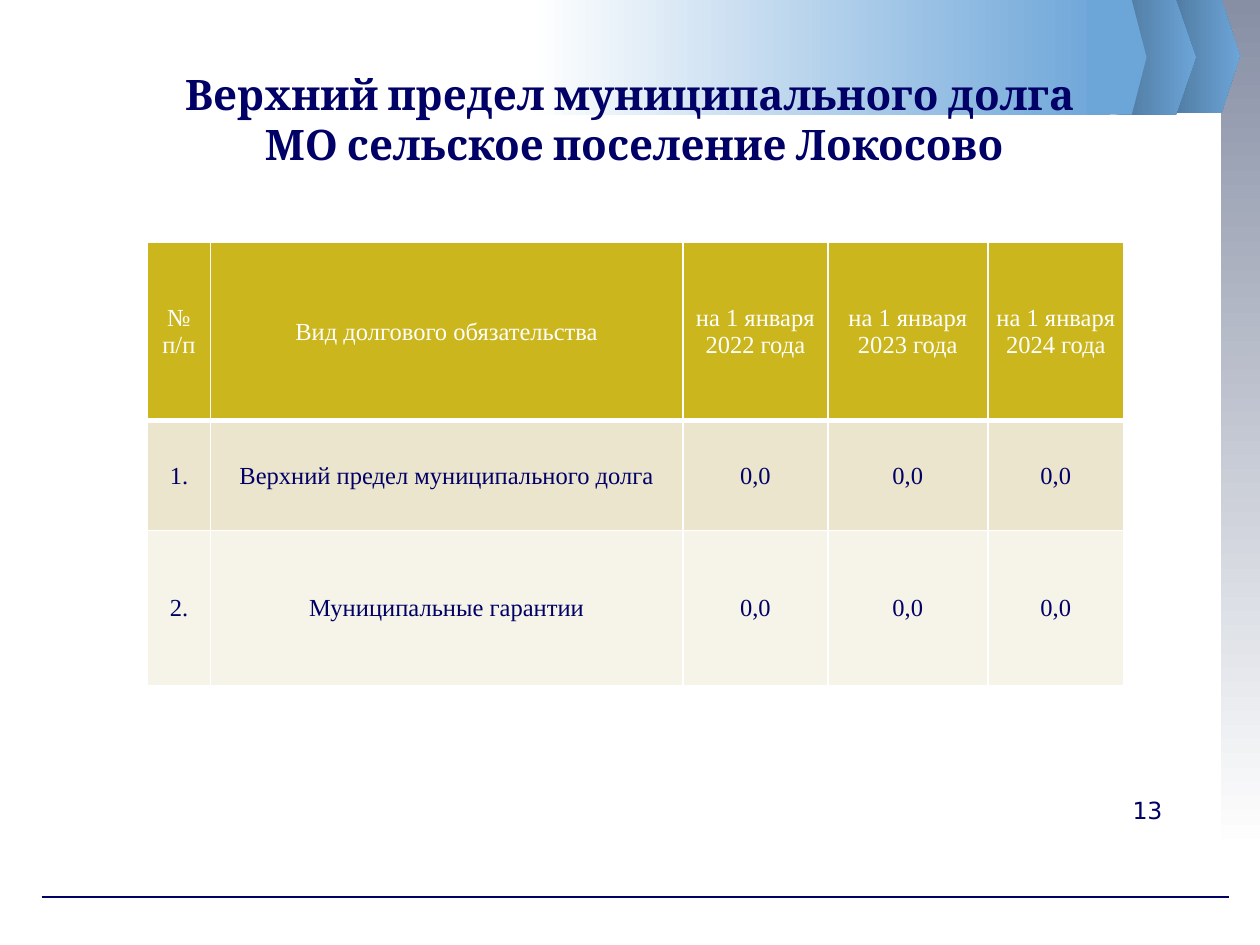
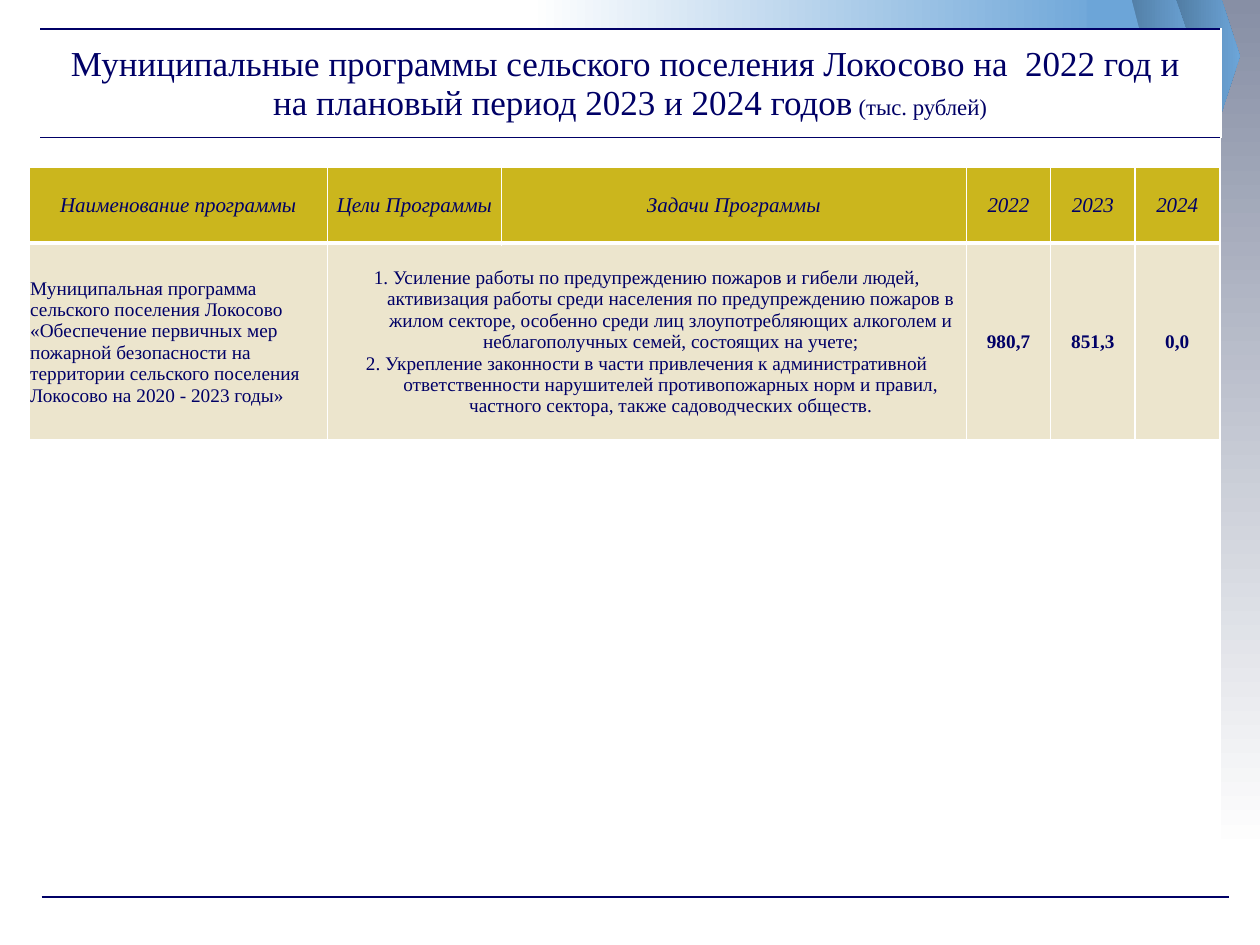
from dataclasses import dataclass, field
from typing import Optional

from lxml import etree
from pptx import Presentation
from pptx import util as u
from pptx.dml.color import RGBColor
from pptx.enum import shapes, text
from pptx.oxml.ns import qn

# Grid: 100 columns by 75 rows over the whole slide
SLIDE_W, SLIDE_H = u.Inches(10), u.Inches(7.5)
COLUMN, ROW = SLIDE_W / 100, SLIDE_H / 75

# Colours and fonts
NAVY, WHITE, SKY, STEEL, SLATE = "000066", "FFFFFF", "6CA5D8", "4D769B", "878FA5"
GOLD, SAND, CREAM = "CBB61D", "ECE5CD", "F6F3E8"
SERIF = "Times New Roman"
CENTER, LEFT = text.PP_ALIGN.CENTER, text.PP_ALIGN.LEFT
MIDDLE, TOP = text.MSO_ANCHOR.MIDDLE, text.MSO_ANCHOR.TOP

# Text formats
TITLE = {"name": "Cambria", "size": u.Pt(24), "bold": True, "color": NAVY}
NUMBER = {"name": "DejaVu Sans", "size": u.Pt(13.5), "color": NAVY}
DEBT_BODY = {"name": SERIF, "size": u.Pt(14), "color": NAVY}
DEBT_HEAD = DEBT_BODY | {"color": WHITE}
PROGRAM_HEAD = {"name": SERIF, "size": u.Pt(12), "italic": True, "color": NAVY}
PROGRAM_BODY = {"name": SERIF, "size": u.Pt(11), "color": NAVY}
PROGRAM_SUM = PROGRAM_BODY | {"bold": True}
HEADING = {"name": SERIF, "size": u.Pt(20), "color": NAVY}
HEADING_UNIT = HEADING | {"size": u.Pt(13)}

# Borders: side -> (colour, points)
THIN = {side: (WHITE, 1) for side in "LRTB"}
HEAD_EDGES = THIN | {"B": (WHITE, 3)}
BELOW_HEAD = THIN | {"T": (WHITE, 3)}
RULED = THIN | {"T": (NAVY, 1), "B": (NAVY, 1)}


@dataclass
class Box:
    col: float
    row: float
    cols: float
    rows: float

    def emu(self) -> tuple:
        return (u.Emu(round(self.col * COLUMN)), u.Emu(round(self.row * ROW)),
                u.Emu(round(self.cols * COLUMN)), u.Emu(round(self.rows * ROW)))


@dataclass
class Band:
    box: Box
    shape: shapes.MSO_SHAPE
    start: str
    end: str
    angle: int = 0


@dataclass
class Cell:
    paragraphs: list            # each paragraph is a list of (words, format)
    align: text.PP_ALIGN = CENTER
    hanging: float = 0
    span: int = 1


@dataclass
class Line:
    rows: float
    fill: str
    cells: list
    edges: dict = field(default_factory=lambda: THIN)
    inset: float = 0.01


RECT, PENTAGON = shapes.MSO_SHAPE.RECTANGLE, shapes.MSO_SHAPE.PENTAGON
BANDS = [
    Band(Box(96.9, 0, 3.1, 67.7), RECT, SLATE, WHITE, 270),
    Band(Box(92.5, -0.1, 5.9, 9.1), PENTAGON, STEEL, SKY),
    Band(Box(88.6, 0, 6.3, 9.1), PENTAGON, STEEL, SKY),
    Band(Box(42.1, 0, 46, 9.1), RECT, WHITE, SKY),
    Band(Box(86.3, 0, 4.7, 9.1), PENTAGON, SKY, SKY),
]


def rgb(value: str) -> RGBColor:
    return RGBColor.from_string(value)


def write(paragraph, runs: list, align=None) -> None:
    """Add formatted runs; a newline inside the words is a line break."""
    paragraph.alignment = align
    for words, style in runs:
        for index, part in enumerate(words.split("\n")):
            if index:
                paragraph.add_line_break()
            run = paragraph.add_run()
            run.text = part
            for name, value in style.items():
                if name == "color":
                    run.font.color.rgb = rgb(value)
                else:
                    setattr(run.font, name, value)


def draw_band(slide, band: Band) -> None:
    shape = slide.shapes.add_shape(band.shape, *band.box.emu())
    shape.shadow.inherit = False
    shape.line.fill.background()
    if band.shape == PENTAGON:
        shape.adjustments[0] = 0.25
    if band.start == band.end:
        shape.fill.solid()
        shape.fill.fore_color.rgb = rgb(band.start)
        return
    shape.fill.gradient()
    shape.fill.gradient_angle = band.angle
    for stop, color in zip(shape.fill.gradient_stops, (band.start, band.end)):
        stop.color.rgb = rgb(color)


def add_page(deck):
    """Blank slide with the shared bands and footer rule."""
    slide = deck.slides.add_slide(deck.slide_layouts[6])
    for band in BANDS:
        draw_band(slide, band)
    left, top, width, _ = Box(3.3, 71.2, 94.2, 0).emu()
    rule = slide.shapes.add_connector(shapes.MSO_CONNECTOR.STRAIGHT,
                                      left, top, left + width, top)
    rule.line.color.rgb = rgb(NAVY)
    rule.line.width = u.Pt(0.75)
    etree.SubElement(rule._element.spPr, qn("a:effectLst"))
    return slide


def add_text(slide, box: Box, words: str, style: dict, align, anchor) -> None:
    frame = slide.shapes.add_textbox(*box.emu()).text_frame
    frame.word_wrap = True
    frame.vertical_anchor = anchor
    write(frame.paragraphs[0], [(words, style)], align)


def set_edges(cell, edges: dict) -> None:
    props = cell._tc.get_or_add_tcPr()
    for side, (color, points) in edges.items():
        edge = etree.SubElement(props, qn(f"a:ln{side}"), w=str(u.Pt(points)))
        solid = etree.SubElement(edge, qn("a:solidFill"))
        etree.SubElement(solid, qn("a:srgbClr"), val=color)


def fill_cell(target, cell: Optional[Cell], line: Line) -> None:
    set_edges(target, line.edges)
    target.fill.solid()
    target.fill.fore_color.rgb = rgb(line.fill)
    inset = u.Inches(line.inset)
    layout = {"vertical_anchor": MIDDLE, "margin_left": inset,
              "margin_right": inset, "margin_top": inset, "margin_bottom": 0}
    for name, value in layout.items():
        setattr(target, name, value)
    if cell is None:
        return
    frame = target.text_frame
    for index, runs in enumerate(cell.paragraphs):
        paragraph = frame.add_paragraph() if index else frame.paragraphs[0]
        write(paragraph, runs, cell.align)
        if cell.hanging:
            indent = u.Inches(cell.hanging)
            props = paragraph._p.get_or_add_pPr()
            props.set("marL", str(indent))
            props.set("indent", str(-indent))


def add_grid(slide, col: float, row: float, widths: list, lines: list) -> None:
    box = Box(col, row, sum(widths), sum(line.rows for line in lines))
    table = slide.shapes.add_table(len(lines), len(widths), *box.emu()).table
    table.first_row = table.horz_banding = False
    for column, width in zip(table.columns, widths):
        column.width = u.Emu(round(width * COLUMN))
    for r, line in enumerate(lines):
        table.rows[r].height = u.Emu(round(line.rows * ROW))
        c = 0
        for cell in line.cells:
            for offset in range(cell.span):
                fill_cell(table.cell(r, c + offset), None if offset else cell, line)
            if cell.span > 1:
                table.cell(r, c).merge(table.cell(r, c + cell.span - 1))
            c += cell.span


def plain(style: dict, *texts: str) -> list:
    return [Cell([[(words, style)]]) for words in texts]


def debt_limit_page(deck) -> None:
    slide = add_page(deck)
    add_text(slide, Box(11.7, 4.7, 77.3, 9.4),
             "Верхний предел муниципального долга \nМО сельское поселение Локосово",
             TITLE, CENTER, MIDDLE)
    dates = [f"на 1 января {year} года" for year in (2022, 2023, 2024)]
    zeros = ["0,0"] * len(dates)
    add_grid(slide, 11.7, 19.2, [5, 37.5, 11.5, 12.7, 10.8], [
        Line(14.2, GOLD, plain(DEBT_HEAD, "№ п/п", "Вид долгового обязательства", *dates),
             HEAD_EDGES),
        Line(8.7, SAND, plain(DEBT_BODY, "1.", "Верхний предел муниципального долга", *zeros),
             BELOW_HEAD),
        Line(12.3, CREAM, plain(DEBT_BODY, "2.", "Муниципальные гарантии", *zeros)),
    ])
    add_text(slide, Box(88.9, 62.7, 6.7, 5.7), "13", NUMBER, LEFT, TOP)


def programs_page(deck) -> None:
    slide = add_page(deck)
    program = Cell([[("Муниципальная программа сельского поселения Локосово "
                      "«Обеспечение первичных мер пожарной безопасности на территории "
                      "сельского поселения Локосово на 2020 - 2023 годы»", PROGRAM_BODY)]], LEFT)
    tasks = Cell([
        [("1. Усиление работы по предупреждению пожаров и гибели людей, активизация "
          "работы среди населения по предупреждению пожаров в жилом секторе, особенно "
          "среди лиц злоупотребляющих алкоголем и неблагополучных семей, состоящих "
          "на учете;", PROGRAM_BODY)],
        [("2. Укрепление законности в части привлечения к административной "
          "ответственности нарушителей противопожарных норм и правил, частного "
          "сектора, также садоводческих обществ.", PROGRAM_BODY)],
    ], hanging=0.38, span=2)
    add_grid(slide, 2.3, 13.3, [23.7, 13.8, 36.9] + [6.7] * 3, [
        Line(6, GOLD, plain(PROGRAM_HEAD, "Наименование программы", "Цели Программы",
                            "Задачи Программы", "2022", "2023", "2024"), HEAD_EDGES, 0),
        Line(15.6, SAND, [program, tasks, *plain(PROGRAM_SUM, "980,7", "851,3", "0,0")],
             BELOW_HEAD),
    ])
    # Ruled heading over the top bands
    heading = Cell([
        [("Муниципальные программы сельского поселения Локосово на  2022 год и ", HEADING)],
        [("на плановый период 2023 и 2024 годов", HEADING), (" (тыс. рублей)", HEADING_UNIT)],
    ])
    add_grid(slide, 3.1, 2.3, [93.8], [Line(8.6, WHITE, [heading], RULED)])


def main() -> None:
    deck = Presentation()
    deck.slide_width, deck.slide_height = SLIDE_W, SLIDE_H
    debt_limit_page(deck)
    programs_page(deck)
    deck.save("out.pptx")


if __name__ == "__main__":
    main()
